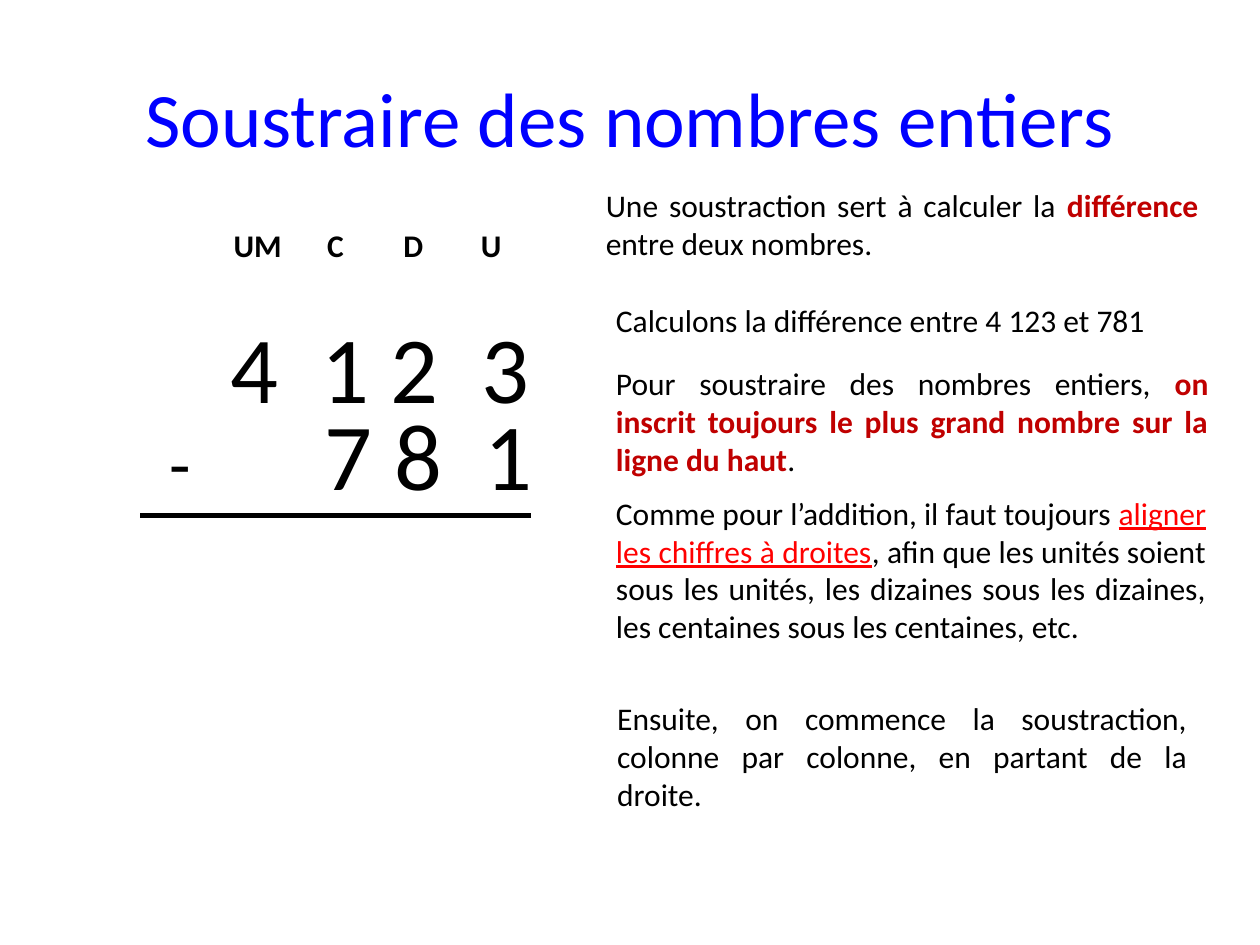
from dataclasses import dataclass
from typing import Any

from lxml.etree import SubElement
from pptx import Presentation
from pptx.dml.color import RGBColor
from pptx.enum.text import MSO_ANCHOR as Anchor, MSO_AUTO_SIZE as AutoSize, PP_ALIGN as Align
from pptx.oxml import parse_xml
from pptx.oxml.ns import nsdecls, qn
from pptx.util import Inches, Pt

BLACK = RGBColor(0x00, 0x00, 0x00)
BLUE = RGBColor(0x00, 0x00, 0xFF)
DARK_RED = RGBColor(0xC0, 0x00, 0x00)
RED = RGBColor(0xFF, 0x00, 0x00)

GRID = Inches(0.1)  # the slide is 100 columns by 75 rows
COLUMNS, ROWS = 100, 75


def cells(count):
    return round(count * GRID)


@dataclass
class LessonSlide:
    slide: Any
    face: str = "Calibri"
    body_size: int = 18
    digit_size: int = 54
    rule_width: int = 3

    def style(self, paragraph, size, color=BLACK, align=None, bold=None):
        font = paragraph.font
        font.name, font.size, font.bold = self.face, Pt(size), bold
        font.color.rgb = color
        paragraph.alignment = align

    def box(self, col, row, width, height):
        frame = self.slide.shapes.add_textbox(*map(cells, (col, row, width, height))).text_frame
        frame.word_wrap = True
        return frame

    def title(self, text, *place):
        frame = self.box(*place)
        frame.vertical_anchor = Anchor.MIDDLE
        frame.text = text
        self.style(frame.paragraphs[0], 44, BLUE, Align.CENTER)

    def explanation(self, place, before, key="", after="", color=DARK_RED,
                    bold=None, underline=None, align=Align.JUSTIFY):
        frame = self.box(*place)
        frame.auto_size = AutoSize.SHAPE_TO_FIT_TEXT
        paragraph = frame.paragraphs[0]
        self.style(paragraph, self.body_size, align=align)
        paragraph.add_run().text = before
        if key:
            stressed = paragraph.add_run()
            stressed.text = key
            stressed.font.color.rgb = color
            stressed.font.bold, stressed.font.underline = bold, underline
            paragraph.add_run().text = after

    def number(self, place, digits, stops):
        """Set the digits of a number on tab stops, one per place value."""
        frame = self.box(*place)
        frame.auto_size = AutoSize.SHAPE_TO_FIT_TEXT
        paragraph = frame.paragraphs[0]
        paragraph.add_run().text = "\t".join(digits)
        self.style(paragraph, self.digit_size)
        tabs = SubElement(paragraph._p.get_or_add_pPr(), qn("a:tabLst"))
        for stop in stops:
            SubElement(tabs, qn("a:tab"), pos=str(cells(stop)), algn="l")
        # Tab stops come before the default run properties
        tabs.getparent().insert(0, tabs)

    def place_value_table(self, col, row, col_width, heights, headings, sign):
        count = len(headings)
        table = self.slide.shapes.add_table(
            len(heights), count, cells(col), cells(row),
            cells(col_width * count), cells(sum(heights))).table
        table.first_row = table.horz_banding = False
        for column in table.columns:
            column.width = cells(col_width)
        last = len(heights) - 1
        for r, height in enumerate(heights):
            table.rows[r].height = cells(height)
            for c in range(count):
                cell = table.cell(r, c)
                cell.fill.background()
                cell.vertical_anchor = Anchor.MIDDLE
                if r == 0:
                    cell.text = headings[c]
                elif r == last and c == 1:
                    cell.text = sign
                self.style(cell.text_frame.paragraphs[0], 40 if cell.text == sign else self.body_size,
                           align=Align.CENTER, bold=r == 0)
                if r == last and c > 0:
                    self.underline_cell(cell)

    def underline_cell(self, cell):
        cell._tc.get_or_add_tcPr().insert(0, parse_xml(
            f'<a:lnB {nsdecls("a")} w="{Pt(self.rule_width)}"><a:solidFill>'
            f'<a:srgbClr val="{BLACK}"/></a:solidFill></a:lnB>'))


def main():
    deck = Presentation()
    deck.slide_width, deck.slide_height = cells(COLUMNS), cells(ROWS)
    lesson = LessonSlide(deck.slides.add_slide(deck.slide_layouts[6]))

    lesson.title("Soustraire des nombres entiers", 5, 3, 90, 12.5)

    # Place values, minus sign and the rule above the result
    lesson.place_value_table(5, 17.5, 6.18, [4.1, 5.7, 5.7, 7.9],
                             ["", "", "UM", "C", "D", "U"], "-")

    # Explanations, step by step
    lesson.explanation((47.9, 28.4, 49, 10.1), "Pour soustraire des nombres entiers, ",
                       "on inscrit toujours le plus grand nombre sur la ligne du haut", ".",
                       bold=True)
    lesson.explanation((47.9, 38.7, 48.8, 16.2), "Comme pour l’addition, il faut toujours ",
                       "aligner les chiffres à droites",
                       ", afin que les unités soient sous les unités, les dizaines sous les "
                       "dizaines, les centaines sous les centaines, etc.",
                       color=RED, underline=True)
    lesson.explanation((48, 55, 47.2, 10.1), "Ensuite, on commence la soustraction, "
                       "colonne par colonne, en partant de la droite.")
    lesson.explanation((47.1, 14.3, 49, 7.1), "Une soustraction sert à calculer la ",
                       "différence", " entre deux nombres.", bold=True)
    lesson.explanation((47.9, 23.4, 49, 4),
                       "Calculons la différence entre 4 123 et 781", align=Align.LEFT)

    # The two numbers
    lesson.number((17.3, 24, 30.7, 10.1), "4123", [7.2, 12.7, 19.9])
    lesson.number((24.8, 30.9, 18.9, 10.1), "781", [5.5, 12.7])

    deck.save("out.pptx")


if __name__ == "__main__":
    main()
